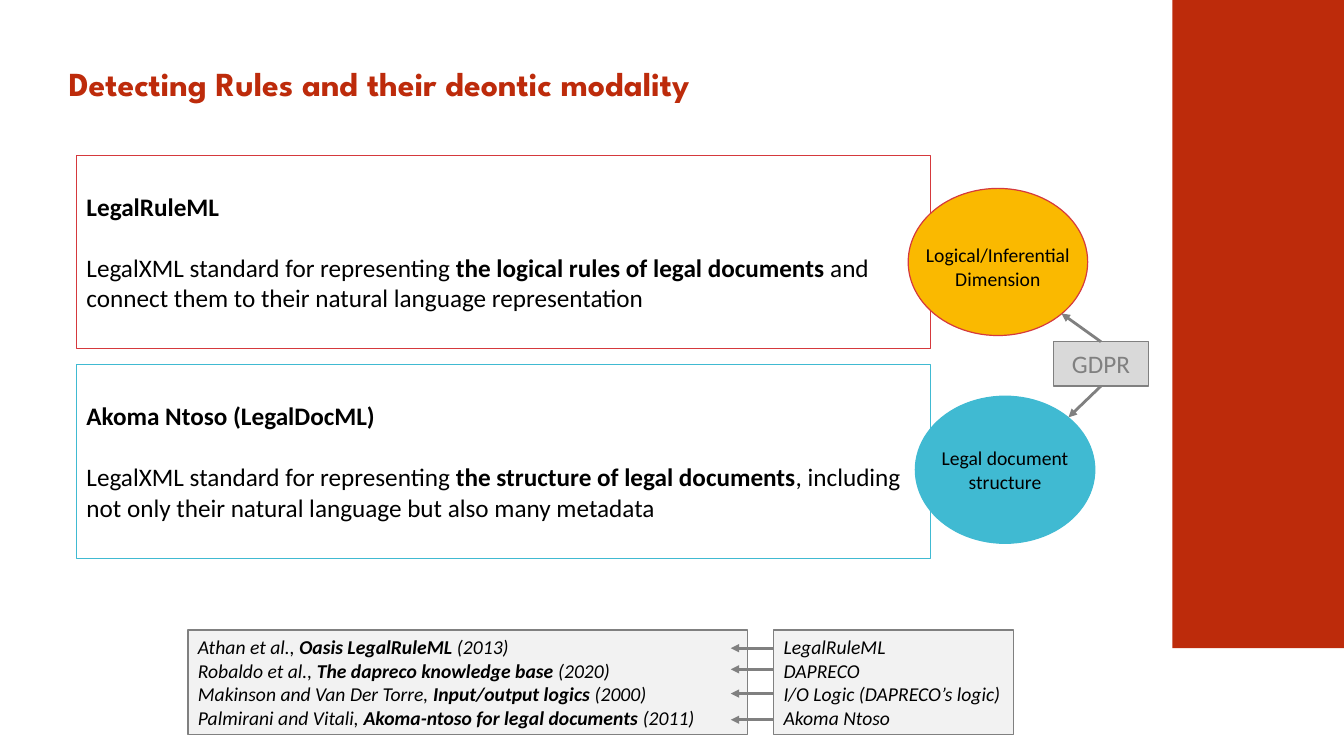
from dataclasses import dataclass
from lxml.etree import SubElement
from pptx import Presentation
from pptx.dml.color import RGBColor
from pptx.enum.shapes import MSO_CONNECTOR, MSO_SHAPE
from pptx.enum.text import MSO_ANCHOR, MSO_AUTO_SIZE, PP_ALIGN
from pptx.oxml.ns import qn
from pptx.util import Pt


@dataclass(frozen=True)
class Theme:
    red: str = "BD2B0B"
    crimson: str = "D5393D"
    blue: str = "40BAD2"
    amber: str = "FAB900"
    black: str = "000000"
    grey: str = "808080"
    light: str = "D9D9D9"
    pale: str = "F2F2F2"
    head_font: str = "League Spartan"
    body_font: str = "Calibri"
    head_size: int = 24
    body_size: int = 18
    small_size: int = 14


class Slide:
    def __init__(self, prs, theme):
        self.s = prs.slides.add_slide(prs.slide_layouts[5])
        self.t = theme

    def run(self, p, text, size, color, font=None, bold=False, italic=False):
        r = p.add_run()
        r.text = text
        r.font.name = font or self.t.body_font
        r.font.size = Pt(size)
        r.font.bold = bold
        r.font.italic = italic
        r.font.color.rgb = RGBColor.from_string(color)

    def title(self, text, x, y, w, h):
        sp = self.s.shapes.title
        sp.left, sp.top, sp.width, sp.height = Pt(x), Pt(y), Pt(w), Pt(h)
        tf = sp.text_frame
        tf.auto_size = MSO_AUTO_SIZE.NONE
        tf.vertical_anchor = MSO_ANCHOR.MIDDLE
        p = tf.paragraphs[0]
        p.alignment = PP_ALIGN.LEFT
        p.line_spacing = Pt(22)
        self.run(p, text, self.t.head_size, self.t.red, self.t.head_font, bold=True)

    def shape(self, x, y, w, h, fill=None, line=None, width=0.75, kind=MSO_SHAPE.RECTANGLE):
        sp = self.s.shapes.add_shape(kind, Pt(x), Pt(y), Pt(w), Pt(h))
        sp.shadow.inherit = False
        if fill:
            sp.fill.solid()
            sp.fill.fore_color.rgb = RGBColor.from_string(fill)
        else:
            sp.fill.background()
        if line:
            sp.line.color.rgb = RGBColor.from_string(line)
            sp.line.width = Pt(width)
        else:
            sp.line.fill.background()
        return sp

    def text(self, sp, paragraphs, size, color=None, align=PP_ALIGN.LEFT,
             anchor=MSO_ANCHOR.TOP, top=3.6, gap=0, wrap=True, italic=False):
        """Each paragraph is a list of (text, bold) runs."""
        tf = sp.text_frame
        tf.word_wrap = wrap
        tf.vertical_anchor = anchor
        tf.margin_top = Pt(top)
        for i, runs in enumerate(paragraphs):
            p = tf.add_paragraph() if i else tf.paragraphs[0]
            p.alignment = align
            if i and gap:
                p.space_before = Pt(gap)
            for text, bold in runs:
                self.run(p, text, size, color or self.t.black, bold=bold, italic=italic)

    def arrow(self, x1, y1, x2, y2, start=None, site=0):
        c = self.s.shapes.add_connector(MSO_CONNECTOR.STRAIGHT, Pt(x1), Pt(y1), Pt(x2), Pt(y2))
        if start is not None:
            c.begin_connect(start, site)
        c.line.color.rgb = RGBColor.from_string(self.t.grey)
        c.line.width = Pt(2)
        SubElement(c.line._get_or_add_ln(), qn("a:tailEnd"), type="triangle")
        SubElement(c._element.spPr, qn("a:effectLst"))


def main():
    prs = Presentation()
    prs.slide_width, prs.slide_height = Pt(960), Pt(540)
    t = Theme()
    s = Slide(prs, t)
    s.title("Detecting Rules and their deontic modality", 41.8, 37.4, 884, 51)

    # Standards, each with its dimension
    intro = ("LegalXML standard for representing ", False)
    standards = [
        (110.9, t.crimson, "LegalRuleML",
         [intro, ("the logical rules of legal documents", True),
          (" and connect them to their natural language representation", False)],
         648.7, 134.6, t.amber, ["Logical/Inferential", "Dimension"], 10),
        (260.6, t.blue, "Akoma Ntoso (LegalDocML)",
         [intro, ("the structure of legal documents", True),
          (", including not only their natural language but also many metadata", False)],
         653.8, 283, t.blue, ["Legal document", "structure"], 3.6),
    ]
    for y, line, name, body, oval_x, oval_y, fill, label, inset in standards:
        box = s.shape(54.7, y, 609.8, 138.2, line=line)
        s.text(box, [[(name, True)], body], t.body_size, top=25.6, gap=22)
        oval = s.shape(oval_x, oval_y, 128.2, 105.1, fill, line, 0.85, MSO_SHAPE.OVAL)
        s.text(oval, [[(row, False)] for row in label], t.small_size,
               align=PP_ALIGN.CENTER, anchor=MSO_ANCHOR.MIDDLE, top=inset, wrap=False)

    # GDPR and its two arrows
    gdpr = s.shape(752.4, 244.1, 68, 31.7, t.light, t.grey, 0.85)
    s.text(gdpr, [[("GDPR", False)]], t.body_size, t.grey,
           PP_ALIGN.CENTER, MSO_ANCHOR.MIDDLE)
    s.arrow(786.4, 244.1, 758.2, 223.9, gdpr, 0)
    s.arrow(786.4, 275.8, 763.2, 298.1, gdpr, 2)

    # References, with arrows from their topics
    references = [
        ("Athan et al., ", "Oasis LegalRuleML", " (2013)", "LegalRuleML", 463),
        ("Robaldo et al., ", "The dapreco knowledge base", " (2020)", "DAPRECO", 478.1),
        ("Makinson and Van Der Torre, ", "Input/output logics ", "(2000)",
         "I/O Logic (DAPRECO’s logic)", 495.4),
        ("Palmirani and Vitali, ", "Akoma-ntoso for legal documents ", "(2011)",
         "Akoma Ntoso", 514.1),
    ]
    sources = s.shape(134.3, 450, 399.6, 74.9, t.pale, t.grey, 1)
    s.text(sources, [[(who, False), (work, True), (year, False)]
                     for who, work, year, _, _ in references], t.small_size, italic=True)
    for *_, y in references:
        s.arrow(558, y, 522, y)
    topics = s.shape(552.6, 450, 171.4, 74.9, t.pale, t.grey, 1)
    s.text(topics, [[(topic, False)] for *_, topic, _ in references],
           t.small_size, italic=True)

    # Side band
    s.shape(837.4, 0, 122.6, 463, t.red)
    prs.save("out.pptx")


if __name__ == "__main__":
    main()
